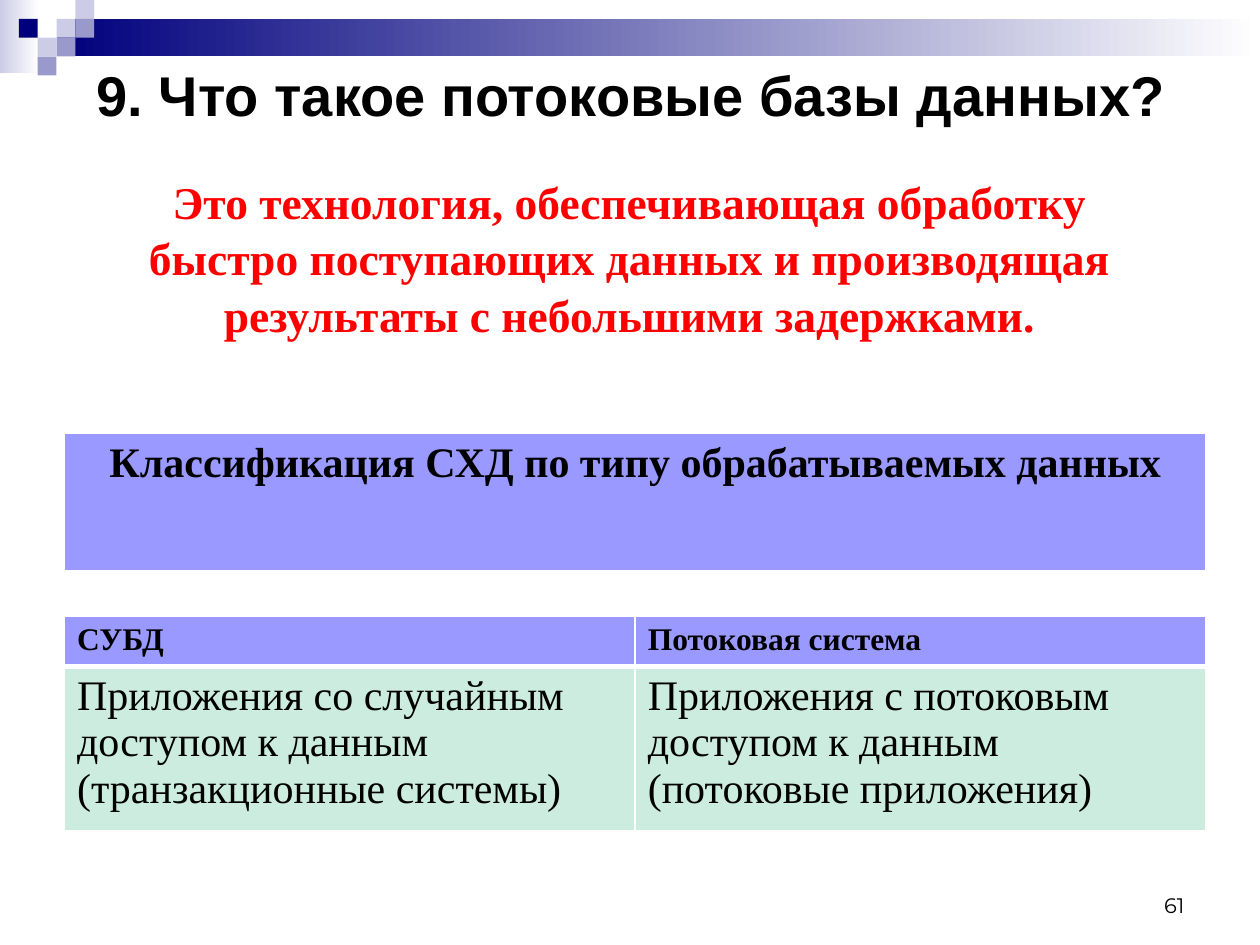
from dataclasses import dataclass

from lxml.etree import SubElement
from pptx import Presentation
from pptx.dml.color import RGBColor
from pptx.enum.shapes import MSO_SHAPE
from pptx.enum.text import MSO_ANCHOR, PP_ALIGN
from pptx.oxml.ns import qn
from pptx.util import Cm, Pt


@dataclass(frozen=True)
class Theme:
    white: str = "FFFFFF"
    black: str = "000000"
    red: str = "FF0000"
    navy: str = "00007D"
    lavender: str = "CCCCE6"
    violet: str = "9999CC"
    header: str = "9999FF"
    mint: str = "CBECDE"
    heading_font: str = "Arial"
    text_font: str = "Times New Roman"
    number_font: str = "Montserrat"
    title_size: int = 32
    definition_size: int = 26
    cell_size: int = 24
    header_size: int = 18
    number_size: int = 12


THEME = Theme()
THIN, THICK = 1, 3


def format_text(frame, text, font, size, color=THEME.black, bold=False, align=PP_ALIGN.LEFT):
    frame.text = text
    paragraph = frame.paragraphs[0]
    paragraph.alignment = align
    for run in paragraph.runs:
        run.font.name = font
        run.font.size = Pt(size)
        run.font.bold = bold
        run.font.color.rgb = RGBColor.from_string(color)


def add_text(slide, box, text, font, size, anchor=MSO_ANCHOR.TOP, **style):
    frame = slide.shapes.add_textbox(*map(Cm, box)).text_frame
    frame.word_wrap = True
    frame.vertical_anchor = anchor
    format_text(frame, text, font, size, **style)
    return frame.paragraphs[0]


def add_block(slide, box, color, fade_to=None):
    """Add a borderless rectangle, plain or fading from left to right."""
    block = slide.shapes.add_shape(MSO_SHAPE.RECTANGLE, *map(Cm, box))
    block.shadow.inherit = False
    block.line.fill.background()
    if fade_to is None:
        block.fill.solid()
        block.fill.fore_color.rgb = RGBColor.from_string(color)
        return
    block.fill.gradient()
    block.fill.gradient_angle = 0
    for stop, position, stop_color in zip(block.fill.gradient_stops, (0, 1), (color, fade_to)):
        stop.position = position
        stop.color.rgb = RGBColor.from_string(stop_color)


def add_header_band(slide, box):
    left, top, width, height = box
    unit = height / 4
    add_block(slide, (left, top, 0.79, 1.47), THEME.lavender, THEME.white)
    add_block(slide, (left + 3 * unit, top + unit, width - 3 * unit, 2 * unit),
              THEME.navy, THEME.white)
    mosaic = (
        (3, 1, THEME.lavender), (4, 0, THEME.lavender), (4, 1, THEME.violet),
        (2, 2, THEME.lavender), (1, 1, THEME.navy), (3, 2, THEME.violet),
        (2, 3, THEME.violet),
    )
    for column, row, color in mosaic:
        add_block(slide, (left + column * unit, top + row * unit, unit, unit), color)


def set_borders(cell, top, bottom):
    properties = cell._tc.get_or_add_tcPr()
    for tag, width in (("a:lnL", THIN), ("a:lnR", THIN), ("a:lnT", top), ("a:lnB", bottom)):
        line = SubElement(properties, qn(tag), w=str(Pt(width)))
        fill = SubElement(line, qn("a:solidFill"))
        SubElement(fill, qn("a:srgbClr"), val=THEME.white)


def add_grid(slide, box, rows, row_heights, header_size, align=PP_ALIGN.LEFT):
    """Add a table with a violet bold first row and mint rows under it."""
    table = slide.shapes.add_table(len(rows), len(rows[0]), *map(Cm, box)).table
    for row, height in zip(table.rows, row_heights):
        row.height = Cm(height)
    for r, texts in enumerate(rows):
        is_header = r == 0
        for c, text in enumerate(texts):
            cell = table.cell(r, c)
            set_borders(cell, THICK if r == 1 else THIN, THICK if is_header else THIN)
            cell.fill.solid()
            cell.fill.fore_color.rgb = RGBColor.from_string(
                THEME.header if is_header else THEME.mint)
            format_text(cell.text_frame, text, THEME.text_font,
                        header_size if is_header else THEME.cell_size,
                        bold=is_header, align=align)


def add_classification(slide, box):
    left, top, width, height = box
    caption_height, row_heights = 2.79, (1.02, 3.3)
    table_height = sum(row_heights)
    add_grid(slide, (left, top + height - table_height, width, table_height),
             (("СУБД", "Потоковая система"),
              ("Приложения со случайным доступом к данным (транзакционные системы)",
               "Приложения с потоковым доступом к данным (потоковые приложения)")),
             row_heights, THEME.header_size)
    add_grid(slide, (left, top, width, caption_height),
             (("Классификация СХД по типу обрабатываемых данных",),),
             (caption_height,), THEME.cell_size, PP_ALIGN.CENTER)


def main():
    presentation = Presentation()
    presentation.slide_width, presentation.slide_height = Cm(25.4), Cm(19.05)
    slide = presentation.slides.add_slide(presentation.slide_layouts[6])

    add_header_band(slide, (0, 0, 25.4, 1.52))
    add_text(slide, (1.7, 0.84, 22.81, 2.11), "9. Что такое потоковые базы данных?",
             THEME.heading_font, THEME.title_size, MSO_ANCHOR.MIDDLE, bold=True)
    definition = add_text(
        slide, (1.9, 3.33, 21.59, 5.21),
        "Это технология, обеспечивающая обработку быстро поступающих данных "
        "и производящая результаты с небольшими задержками.",
        THEME.text_font, THEME.definition_size,
        color=THEME.red, bold=True, align=PP_ALIGN.CENTER)
    definition.line_spacing = 1.04
    add_classification(slide, (1.3, 8.74, 23.01, 8))
    add_text(slide, (18.21, 17.35, 5.92, 1.27), "61", THEME.number_font,
             THEME.number_size, MSO_ANCHOR.BOTTOM, align=PP_ALIGN.RIGHT)

    presentation.save("out.pptx")


if __name__ == "__main__":
    main()
